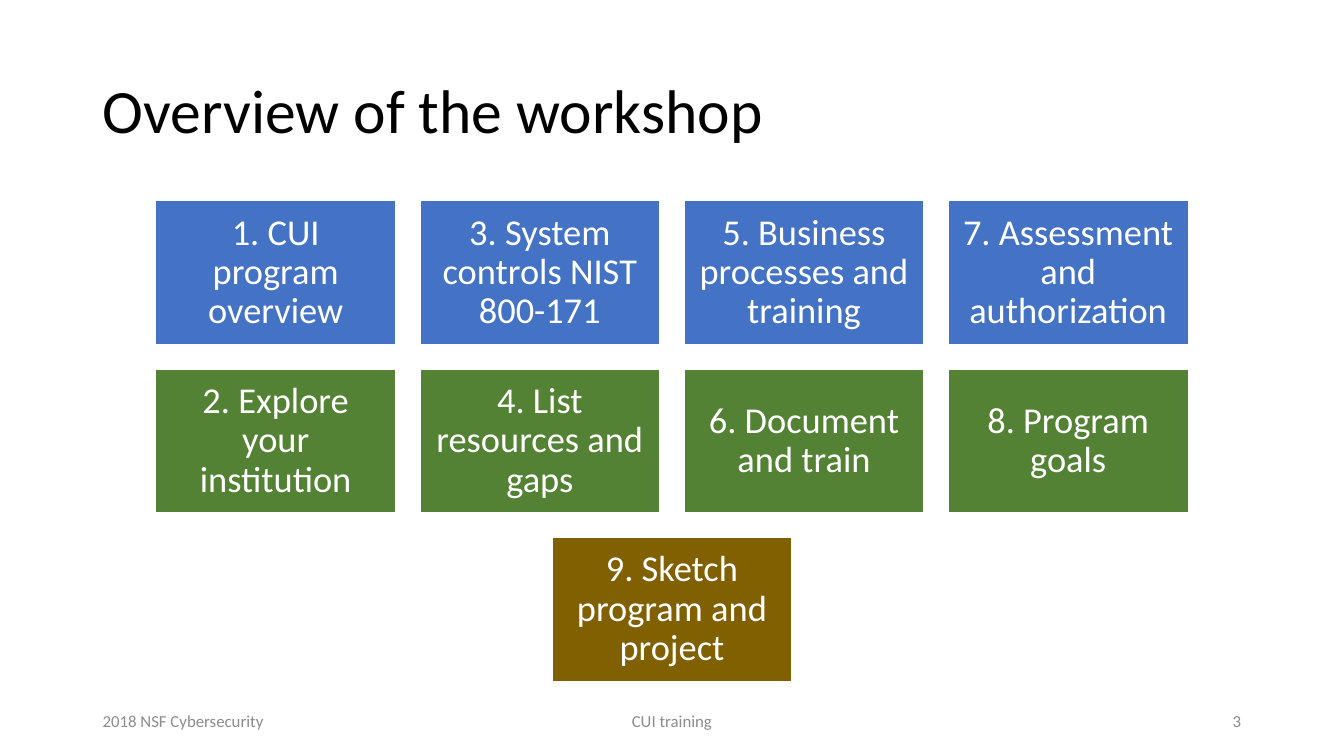
from pptx import Presentation
from pptx.dml.color import RGBColor
from pptx.enum.shapes import MSO_SHAPE as Shape
from pptx.enum.text import MSO_ANCHOR as Anchor, MSO_AUTO_SIZE as AutoSize, PP_ALIGN as Align
from pptx.util import Inches, Pt

FONT = "Calibri"
BLACK = RGBColor(0x00, 0x00, 0x00)
WHITE = RGBColor(0xFF, 0xFF, 0xFF)
GRAY = RGBColor(0x8C, 0x8C, 0x8C)
BLUE = RGBColor(0x44, 0x72, 0xC4)
GREEN = RGBColor(0x54, 0x82, 0x35)
BROWN = RGBColor(0x80, 0x60, 0x00)

PAGE_WIDTH, PAGE_HEIGHT = 13.33, 7.5
MARGIN = 0.92
CONTENT_WIDTH = PAGE_WIDTH - 2 * MARGIN
TILE_WIDTH, TILE_HEIGHT, TILE_GAP = 2.38, 1.43, 0.24

SESSION_ROWS = [
    (BLUE, ["1. CUI program overview", "3. System controls NIST 800-171",
            "5. Business processes and training", "7. Assessment and authorization"]),
    (GREEN, ["2. Explore your institution", "4. List resources and gaps",
             "6. Document and train", "8. Program goals"]),
    (BROWN, ["9. Sketch program and project"]),
]


def write_text(shape, text, size, color, align=Align.LEFT, line_spacing=1.0, inset=None):
    frame = shape.text_frame
    frame.word_wrap = True
    frame.auto_size = AutoSize.NONE
    frame.vertical_anchor = Anchor.MIDDLE
    if inset is not None:
        frame.margin_left = frame.margin_right = Inches(inset)
        frame.margin_top = frame.margin_bottom = Inches(inset)
    para = frame.paragraphs[0]
    para.alignment = align
    para.line_spacing = line_spacing
    span = para.add_run()
    span.text = text
    span.font.name = FONT
    span.font.size = Pt(size)
    span.font.color.rgb = color


def place_title(page, left, top, width, height):
    title = page.shapes.title
    title.left, title.top = Inches(left), Inches(top)
    title.width, title.height = Inches(width), Inches(height)
    write_text(title, "Overview of the workshop", 44, BLACK, line_spacing=0.9)


def add_tile(page, left, top, text, fill):
    tile = page.shapes.add_shape(Shape.RECTANGLE, Inches(left), Inches(top),
                                 Inches(TILE_WIDTH), Inches(TILE_HEIGHT))
    tile.shadow.inherit = False
    tile.fill.solid()
    tile.fill.fore_color.rgb = fill
    tile.line.color.rgb = WHITE
    tile.line.width = Pt(1)
    write_text(tile, text, 26, WHITE, Align.CENTER, line_spacing=0.9, inset=0.11)


def add_sessions(page, left, top, width):
    """Stack the rows of tiles, each row centred in the given width."""
    for row, (fill, sessions) in enumerate(SESSION_ROWS):
        row_width = len(sessions) * (TILE_WIDTH + TILE_GAP) - TILE_GAP
        row_left = left + (width - row_width) / 2
        row_top = top + row * (TILE_HEIGHT + TILE_GAP)
        for column, text in enumerate(sessions):
            add_tile(page, row_left + column * (TILE_WIDTH + TILE_GAP), row_top, text, fill)


def add_footer(page, left, top, width, height):
    side, middle = 3, 4.5
    parts = [
        (left, side, "2018 NSF Cybersecurity", Align.LEFT),
        (left + (width - middle) / 2, middle, "CUI training", Align.CENTER),
        (left + width - side, side, "3", Align.RIGHT),
    ]
    for part_left, part_width, text, align in parts:
        box = page.shapes.add_textbox(Inches(part_left), Inches(top),
                                      Inches(part_width), Inches(height))
        write_text(box, text, 12, GRAY, align)


def main():
    deck = Presentation()
    deck.slide_width, deck.slide_height = Inches(PAGE_WIDTH), Inches(PAGE_HEIGHT)
    page = deck.slides.add_slide(deck.slide_layouts.get_by_name("Title Only"))
    place_title(page, MARGIN, 0.4, CONTENT_WIDTH, 1.45)
    add_sessions(page, MARGIN, 1.99, CONTENT_WIDTH)
    add_footer(page, MARGIN, 6.95, CONTENT_WIDTH, 0.4)
    deck.save("out.pptx")


if __name__ == "__main__":
    main()
